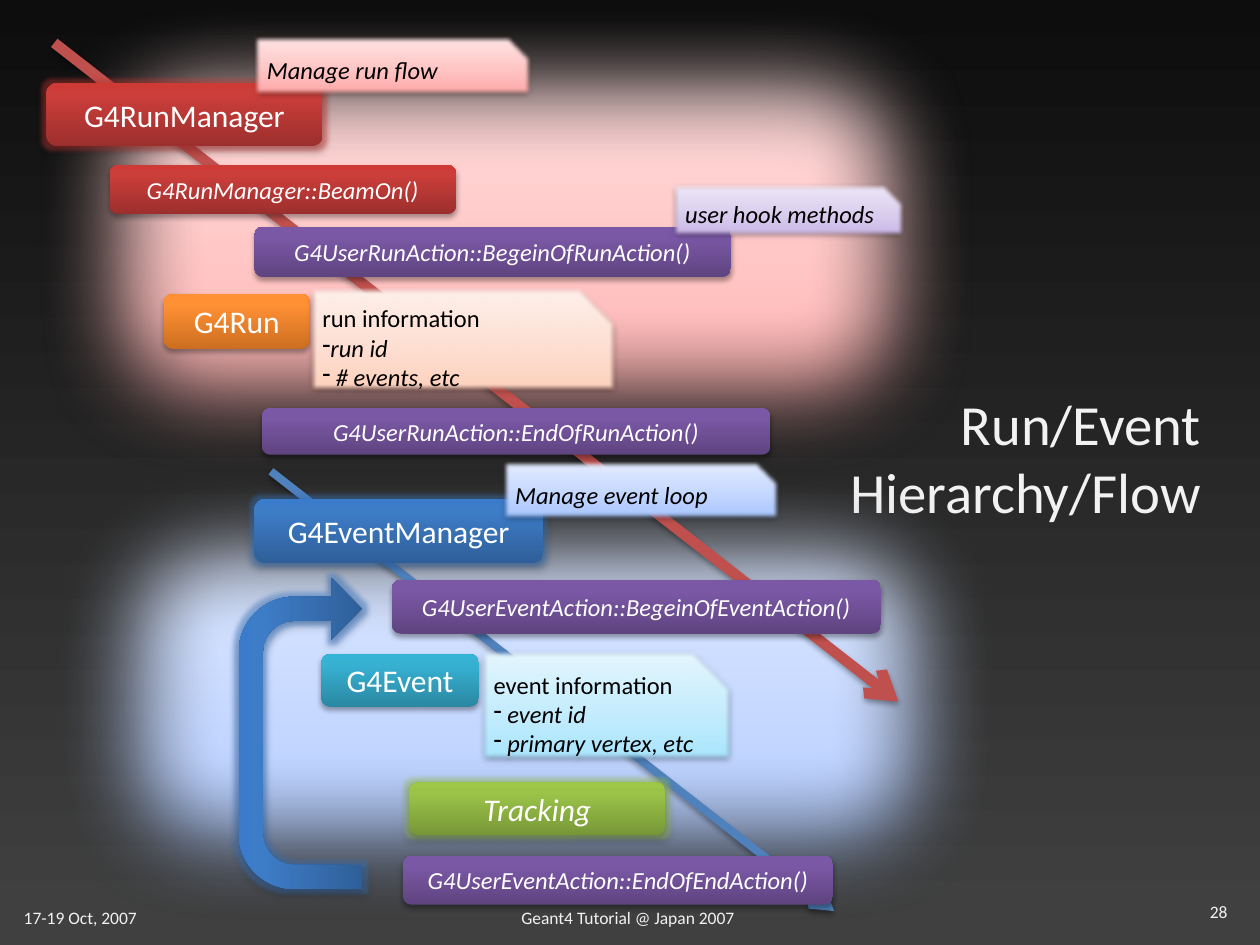
import pptx
import pptx.util
import pptx.dml.color
import pptx.enum.shapes
import pptx.enum.text
import pptx.oxml
import pptx.oxml.ns
from lxml import etree

Pt = pptx.util.Pt
RGB = pptx.dml.color.RGBColor
SHAPE = pptx.enum.shapes.MSO_SHAPE
ALIGN = pptx.enum.text.PP_ALIGN
ANCHOR = pptx.enum.text.MSO_ANCHOR
qn = pptx.oxml.ns.qn

FONT = "Calibri"
WHITE = RGB(0xFF, 0xFF, 0xFF)
BLACK = RGB(0, 0, 0)
PALE = RGB(0xF2, 0xF2, 0xF2)
RED_FLOW = RGB(0xC0, 0x50, 0x4D)
BLUE_FLOW = RGB(0x4F, 0x81, 0xBD)


def ramp(positions, *colors):
    return list(zip(positions, (RGB.from_string(c) for c in colors)))


# Gradients run from bottom to top
DEEP = (0, 80, 100)
LIGHT = (0, 35, 100)
BACKGROUND = ramp((3, 100), "404040", "0D0D0D")
RED = ramp(DEEP, "9C2F2D", "CB3E3A", "CE3B37")
ORANGE = ramp(DEEP, "CC6E20", "FF9034", "FF9136")
TEAL = ramp(DEEP, "2A88A2", "37B1D2", "34B4D6")
BLUE = ramp(DEEP, "2F5F99", "3D7CC7", "3A7CCB")
PURPLE = ramp(DEEP, "5F4480", "7B58A6", "7C57A8")
GREEN = ramp(DEEP, "779737", "9BC348", "9DC746")

# Light themes: gradient and outline
PINK = ramp(LIGHT, "FFA6A5", "FFC0BF", "FFE7E7"), RGB(0xBF, 0x4C, 0x48)
SKY = ramp(LIGHT, "A4C4FF", "BFD4FF", "E6EEFF"), RGB(0x4B, 0x7E, 0xBC)
LILAC = ramp(LIGHT, "C9B5E8", "D8CBEE", "F0EAF9"), RGB(0x7D, 0x60, 0xA0)
PEACH = ramp(LIGHT, "FFD2BD", "FFDED0", "FFF2ED"), RGB(0xF6, 0x92, 0x40)
AQUA = ramp(LIGHT, "A7E6FF", "C1EDFF", "E7F8FF"), RGB(0x46, 0xAA, 0xC5)

# Stage boxes: left, top, width, height
RUN_BOX = (20, 0, 539.5, 272)
EVENT_BOX = (29.5, 267.8, 543, 260)


def sub(parent, tag, **attrs):
    return etree.SubElement(parent, qn(tag), {k: str(v) for k, v in attrs.items()})


def add_color(parent, color, alpha=None):
    clr = sub(parent, "a:srgbClr", val=color)
    if alpha is not None:
        sub(clr, "a:alpha", val=alpha * 1000)


def paint(fill, root, stops):
    fill.gradient()
    fill.gradient_angle = 90
    stop_list = root.find(".//" + qn("a:gsLst"))
    for old in list(stop_list):
        stop_list.remove(old)
    for pos, color in stops:
        add_color(sub(stop_list, "a:gs", pos=pos * 1000), color)


def add_effects(sp_pr, alpha, dist, glow=None, soft=None):
    effects = sp_pr.find(qn("a:effectLst"))
    if effects is None:
        effects = sub(sp_pr, "a:effectLst")
    if glow is not None:
        add_color(sub(effects, "a:glow", rad=Pt(5)), glow, 40)
    shadow = sub(effects, "a:outerShdw", blurRad=Pt(3.1), dist=Pt(dist),
                 dir=5400000, rotWithShape=0)
    add_color(shadow, BLACK, alpha)
    if soft:
        sub(effects, "a:softEdge", rad=Pt(soft))


def style(font, size, color, italic=False):
    font.name, font.size, font.italic = FONT, Pt(size), italic
    font.color.rgb = color


def add_shape(s, kind, box, at, stops):
    x, y, w, h = at
    sp = s.shapes.add_shape(kind, Pt(box[0] + x), Pt(box[1] + y), Pt(w), Pt(h))
    sp.shadow.inherit = False
    paint(sp.fill, sp._element.spPr, stops)
    sp.line.fill.background()
    return sp


def add_soft_shape(s, kind, box, at, theme, soft):
    stops, outline = theme
    sp = add_shape(s, kind, box, at, stops)
    sp.line.color.rgb = outline
    sp.line.width = Pt(0.75)
    add_effects(sp._element.spPr, 38, 1.6, soft=soft)
    return sp


def add_block(s, box, at, stops, text, size=14, italic=True, glow=False):
    sp = add_shape(s, SHAPE.ROUNDED_RECTANGLE, box, at, stops)
    add_effects(sp._element.spPr, 35, 1.8, glow=stops[-1][1] if glow else None)
    tf = sp.text_frame
    tf.text = text
    tf.vertical_anchor = ANCHOR.MIDDLE
    tf.paragraphs[0].alignment = ALIGN.CENTER
    style(tf.paragraphs[0].runs[0].font, size, WHITE, italic)


def add_note(s, box, at, theme, text, items=()):
    sp = add_soft_shape(s, SHAPE.SNIP_1_RECTANGLE, box, at, theme, 2.5)
    sp.adjustments[0] = 0.322
    tf = sp.text_frame
    tf.vertical_anchor = ANCHOR.MIDDLE
    for i, line in enumerate((text, *items)):
        p = tf.add_paragraph() if i else tf.paragraphs[0]
        p.text = line
        p.alignment = ALIGN.LEFT
        if i:
            sub(p._p.get_or_add_pPr(), "a:buChar", char="-")
        style(p.runs[0].font, 14, BLACK, italic=bool(i) or not items)


def add_flow(s, box, start, end, color, width):
    ends = [Pt(box[k] + point[k]) for point in (start, end) for k in (0, 1)]
    line = s.shapes.add_connector(pptx.enum.shapes.MSO_CONNECTOR.STRAIGHT, *ends)
    line.line.color.rgb = color
    line.line.width = Pt(width)
    sub(line.line._get_or_add_ln(), "a:tailEnd", type="arrow")
    add_effects(line._element.spPr, 35, 1.8)


def add_backdrop(s, run_box, event_box):
    # Glowing panels, then the flow arrows that cross them
    for box, theme in ((event_box, SKY), (run_box, PINK)):
        add_soft_shape(s, SHAPE.ROUNDED_RECTANGLE, box, (0, 0, *box[2:]), theme, 50)
    add_flow(s, event_box, (125.3, 1.5), (447.1, 252.8), BLUE_FLOW, 4.5)
    add_flow(s, run_box, (11, 24.5), (493.4, 401), RED_FLOW, 6)


def add_run_stage(s, box):
    add_block(s, box, (6.6, 47.5, 157.7, 36), RED, "G4RunManager", 18, False, True)
    add_block(s, box, (42.6, 94.3, 198, 28.1), RED, "G4RunManager::BeamOn()")
    add_block(s, box, (125.4, 129.6, 272.2, 28.8), PURPLE,
              "G4UserRunAction::BegeinOfRunAction()")
    add_block(s, box, (73.6, 167.8, 83.5, 31.7), ORANGE, "G4Run", 18, False)
    add_block(s, box, (129.8, 233.3, 290.2, 26.6), PURPLE,
              "G4UserRunAction::EndOfRunAction()")
    add_note(s, box, (125.4, 20.9, 157.7, 33.1), PINK, "Manage run flow")
    add_note(s, box, (364.5, 105.1, 131.8, 29.5), LILAC, "user hook methods")
    add_note(s, box, (157.1, 164.2, 175, 59), PEACH, "run information",
             ("run id", " # events, etc"))


def add_event_stage(s, box):
    add_block(s, box, (115.9, 17.3, 164.9, 36.7), BLUE, "G4EventManager", 18, False, True)
    add_block(s, box, (194.4, 63.4, 279.4, 31), PURPLE,
              "G4UserEventAction::BegeinOfEventAction()")
    add_block(s, box, (154.1, 105.9, 90, 30.2), TEAL, "G4Event", 18, False)
    add_block(s, box, (204.5, 179.3, 146.2, 30.2), GREEN, "Tracking", 18, glow=True)
    add_block(s, box, (200.9, 221.1, 245.5, 28.1), PURPLE,
              "G4UserEventAction::EndOfEndAction()")
    add_note(s, box, (257.8, -4.3, 157.7, 33.1), SKY, "Manage event loop")
    add_note(s, box, (245.5, 103.7, 143.3, 62.6), AQUA, "event information",
             (" event id", " primary vertex, etc"))

    # Loop back to the next event
    loop = add_shape(s, SHAPE.U_TURN_ARROW, box, (53.3, 116, 177.8, 70.6), BLUE)
    loop.rotation = 270
    for i, value in enumerate((0.196, 0.25, 0.25, 0.45, 1)):
        loop.adjustments[i] = value
    add_effects(loop._element.spPr, 35, 1.8, glow=BLUE[-1][1])


def add_title(s, x, y, w, h):
    title = s.shapes.title
    title.left, title.top, title.width, title.height = Pt(x), Pt(y), Pt(w), Pt(h)
    tf = title.text_frame
    tf.text = "Run/Event\vHierarchy/Flow"
    tf.auto_size = pptx.enum.text.MSO_AUTO_SIZE.NONE
    tf.vertical_anchor = ANCHOR.MIDDLE
    p = tf.paragraphs[0]
    p.alignment = ALIGN.RIGHT
    for r in p.runs:
        style(r.font, 32.4, PALE)


def add_footer(s, x, y):
    for dx, dy, w, h, text, align in (
            (0, 3.6, 81, 19.4, "17-19 Oct, 2007", ALIGN.LEFT),
            (284.4, 3.6, 139, 19.4, "Geant4 Tutorial @ Japan 2007", ALIGN.LEFT),
            (534.2, 0, 167.8, 28.8, "28", ALIGN.RIGHT)):
        tb = s.shapes.add_textbox(Pt(x + dx), Pt(y + dy), Pt(w), Pt(h))
        tf = tb.text_frame
        tf.text = text
        tf.word_wrap = align == ALIGN.RIGHT
        tf.paragraphs[0].alignment = align
        style(tf.paragraphs[0].runs[0].font, 10, PALE)


def main():
    prs = pptx.Presentation()
    prs.slide_width, prs.slide_height = Pt(720), Pt(540)
    s = prs.slides.add_slide(prs.slide_layouts[5])
    paint(s.background.fill, s._element, BACKGROUND)
    add_backdrop(s, RUN_BOX, EVENT_BOX)
    add_title(s, 100.8, 226.8, 592.6, 68.4)
    add_run_stage(s, RUN_BOX)
    add_event_stage(s, EVENT_BOX)
    add_footer(s, 6.5, 511.2)
    prs.save("out.pptx")


if __name__ == "__main__":
    main()
